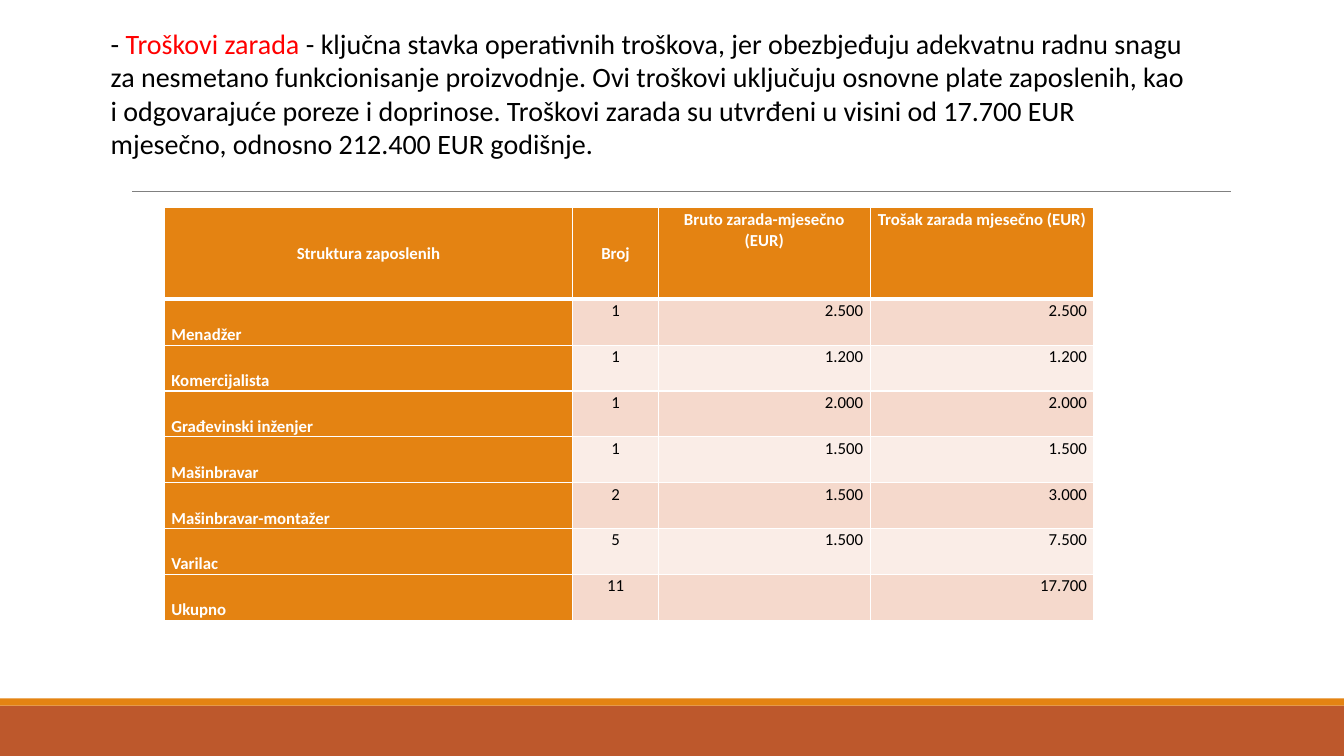
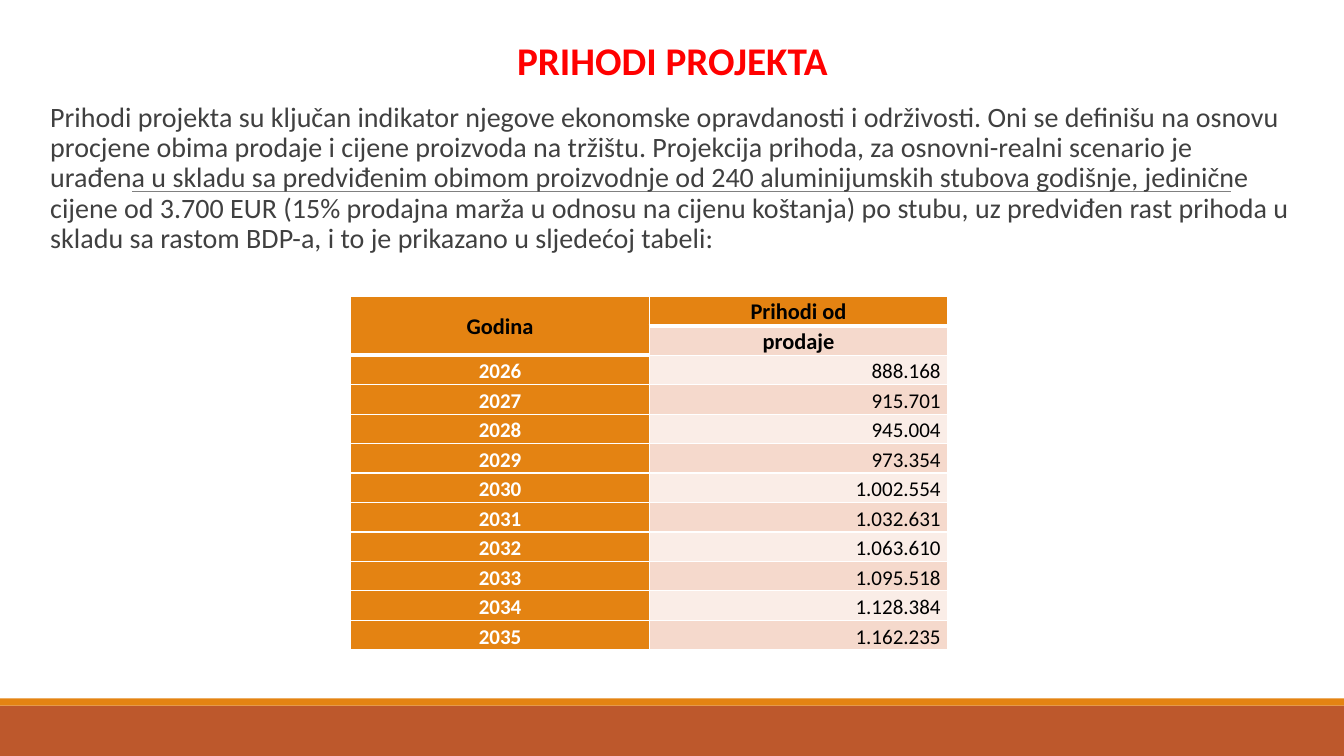
from lxml import etree
from pptx import Presentation
from pptx.dml.color import RGBColor
from pptx.enum.shapes import MSO_CONNECTOR, MSO_SHAPE
from pptx.enum.text import MSO_ANCHOR, PP_ALIGN
from pptx.oxml.ns import qn
from pptx.util import Inches, Pt

LEFT, MID, RIGHT = PP_ALIGN.LEFT, PP_ALIGN.CENTER, PP_ALIGN.RIGHT
TOP, CENTER, BOTTOM = MSO_ANCHOR.TOP, MSO_ANCHOR.MIDDLE, MSO_ANCHOR.BOTTOM
RECT, LINE = MSO_SHAPE.RECTANGLE, MSO_CONNECTOR.STRAIGHT

ORANGE = RGBColor(0xE4, 0x83, 0x12)
RUST = RGBColor(0xBD, 0x58, 0x2C)
DARK = RGBColor(0xF5, 0xD9, 0xCC)
LIGHT = RGBColor(0xFA, 0xED, 0xE7)
WHITE = RGBColor(0xFF, 0xFF, 0xFF)
BLACK = RGBColor(0, 0, 0)
RED = RGBColor(0xFF, 0, 0)
GRAY = RGBColor(0x80, 0x80, 0x80)
INK = RGBColor(0x40, 0x40, 0x40)
FONT = "Calibri"


def style(para, size, color, bold=False, align=LEFT):
    font = para.font
    font.name, font.size, font.bold = FONT, Pt(size), bold
    font.color.rgb = color
    para.alignment = align


def grid(slide, left, top, widths, heights, rows, size, aligns, anchors):
    """Table with a coloured first row and column, banded cells, white borders."""
    frame = slide.shapes.add_table(
        len(rows), len(widths), Inches(left), Inches(top),
        Inches(sum(widths)), Inches(sum(heights)))
    table = frame.table
    for col, width in zip(table.columns, widths):
        col.width = Inches(width)
    for r, row in enumerate(rows):
        table.rows[r].height = Inches(heights[r])
        for c, text in enumerate(row):
            cell = table.cell(r, c)
            head = r == 0 or c == 0
            cell.margin_left = cell.margin_right = Inches(0.07)
            cell.margin_top = cell.margin_bottom = 0
            cell.vertical_anchor = anchors[c]
            cell.text = text
            para = cell.text_frame.paragraphs[0]
            para.line_spacing = 1.07
            style(para, size, WHITE if head else BLACK, head,
                  MID if r == 0 else aligns[c])

            # Borders go ahead of the fill
            props = cell._tc.get_or_add_tcPr()
            sides = ["lnL"] * (c == 0) + ["lnR"] + ["lnT"] * (r == 0) + ["lnB"]
            for side in sides:
                thick = 3 if r == 0 and side == "lnB" else 1
                edge = etree.SubElement(props, qn("a:" + side), w=str(Pt(thick)))
                fill = etree.SubElement(edge, qn("a:solidFill"))
                etree.SubElement(fill, qn("a:srgbClr"), val=str(WHITE))
            cell.fill.solid()
            cell.fill.fore_color.rgb = ORANGE if head else (LIGHT, DARK)[r % 2]
    return table


prs = Presentation()
prs.slide_width, prs.slide_height = Inches(13.33), Inches(7.5)

# Shared bands and rule
slides = []
for _ in range(2):
    slide = prs.slides.add_slide(prs.slide_layouts[6])
    for top, height, color in ((7, 0.5, RUST), (6.93, 0.07, ORANGE)):
        band = slide.shapes.add_shape(
            RECT, 0, Inches(top), prs.slide_width, Inches(height))
        band.shadow.inherit = False
        band.fill.solid()
        band.fill.fore_color.rgb = color
        band.line.fill.background()
    rule = slide.shapes.add_connector(
        LINE, Inches(1.31), Inches(1.9), Inches(12.21), Inches(1.9))
    rule.line.color.rgb = GRAY
    rule.line.width = Pt(0.5)
    etree.SubElement(rule._element.spPr, qn("a:effectLst"))
    slides.append(slide)
wages, sales = slides

# Wages: table
staff = [
    ("Struktura zaposlenih", "Broj", "Bruto zarada-mjesečno (EUR)",
     "Trošak zarada mjesečno (EUR)"),
    ("Menadžer", "1", "2.500", "2.500"),
    ("Komercijalista", "1", "1.200", "1.200"),
    ("Građevinski inženjer", "1", "2.000", "2.000"),
    ("Mašinbravar", "1", "1.500", "1.500"),
    ("Mašinbravar-montažer", "2", "1.500", "3.000"),
    ("Varilac", "5", "1.500", "7.500"),
    ("Ukupno", "11", "", "17.700"),
]
table = grid(wages, 1.63, 2.06, (4.05, 0.85, 2.1, 2.22), [0.91] + [0.455] * 7,
             staff, 12, (LEFT, MID, RIGHT, RIGHT), (BOTTOM, TOP, TOP, TOP))
for c in range(2):
    table.cell(0, c).vertical_anchor = CENTER

# Wages: text
box = wages.shapes.add_textbox(Inches(1), Inches(0.21), Inches(10.9), Inches(1.85))
box.text_frame.word_wrap = True
para = box.text_frame.paragraphs[0]
style(para, 20, BLACK)
for text, color in (
    ("- ", BLACK),
    ("Troškovi zarada ", RED),
    ("- ključna stavka operativnih troškova, jer obezbjeđuju adekvatnu radnu "
     "snagu za nesmetano funkcionisanje proizvodnje. Ovi troškovi uključuju "
     "osnovne plate zaposlenih, kao i odgovarajuće poreze i doprinose. Troškovi "
     "zarada su utvrđeni u visini od 17.700 EUR mjesečno, odnosno 212.400 EUR "
     "godišnje.", BLACK),
):
    run = para.add_run()
    run.text = text
    run.font.color.rgb = color

# Sales: title and text
box = sales.shapes.add_textbox(Inches(0.4), Inches(0.36), Inches(12.44), Inches(2.4))
frame = box.text_frame
frame.word_wrap = True
frame.margin_left, frame.margin_right = Inches(0.1), 0
title, body = frame.paragraphs[0], frame.add_paragraph()
title.text = "PRIHODI PROJEKTA"
body.text = (
    "Prihodi projekta su ključan indikator njegove ekonomske opravdanosti i "
    "održivosti. Oni se definišu na osnovu procjene obima prodaje i cijene "
    "proizvoda na tržištu. Projekcija prihoda, za osnovni-realni scenario je "
    "urađena u skladu sa predviđenim obimom proizvodnje od 240 aluminijumskih "
    "stubova godišnje, jedinične cijene od 3.700 EUR (15% prodajna marža u "
    "odnosu na cijenu koštanja) po stubu, uz predviđen rast prihoda u skladu sa "
    "rastom BDP-a, i to je prikazano u sljedećoj tabeli:")
style(title, 28, RED, True, MID)
style(body, 20, INK)
for para in (title, body):
    para.line_spacing = 0.9
    para.space_before, para.space_after = Pt(12), Pt(2)

# Sales: table
sums = ("888.168", "915.701", "945.004", "973.354", "1.002.554", "1.032.631",
        "1.063.610", "1.095.518", "1.128.384", "1.162.235")
rows = [("Godina", "Prihodi od"), ("", "prodaje")]
rows += [(str(year), total) for year, total in enumerate(sums, 2026)]
table = grid(sales, 3.48, 2.94, (2.96, 2.96), [0.2925] * 12, rows, 15,
             (MID, RIGHT), (BOTTOM, BOTTOM))
for r, c in ((0, 0), (0, 1), (1, 1)):
    style(table.cell(r, c).text_frame.paragraphs[0], 16, BLACK, True, MID)
year = table.cell(0, 0)
year.merge(table.cell(1, 0))
year.vertical_anchor = CENTER
table.cell(1, 0)._tc.tcPr.find(qn("a:lnB")).set("w", str(Pt(3)))

prs.save("out.pptx")
